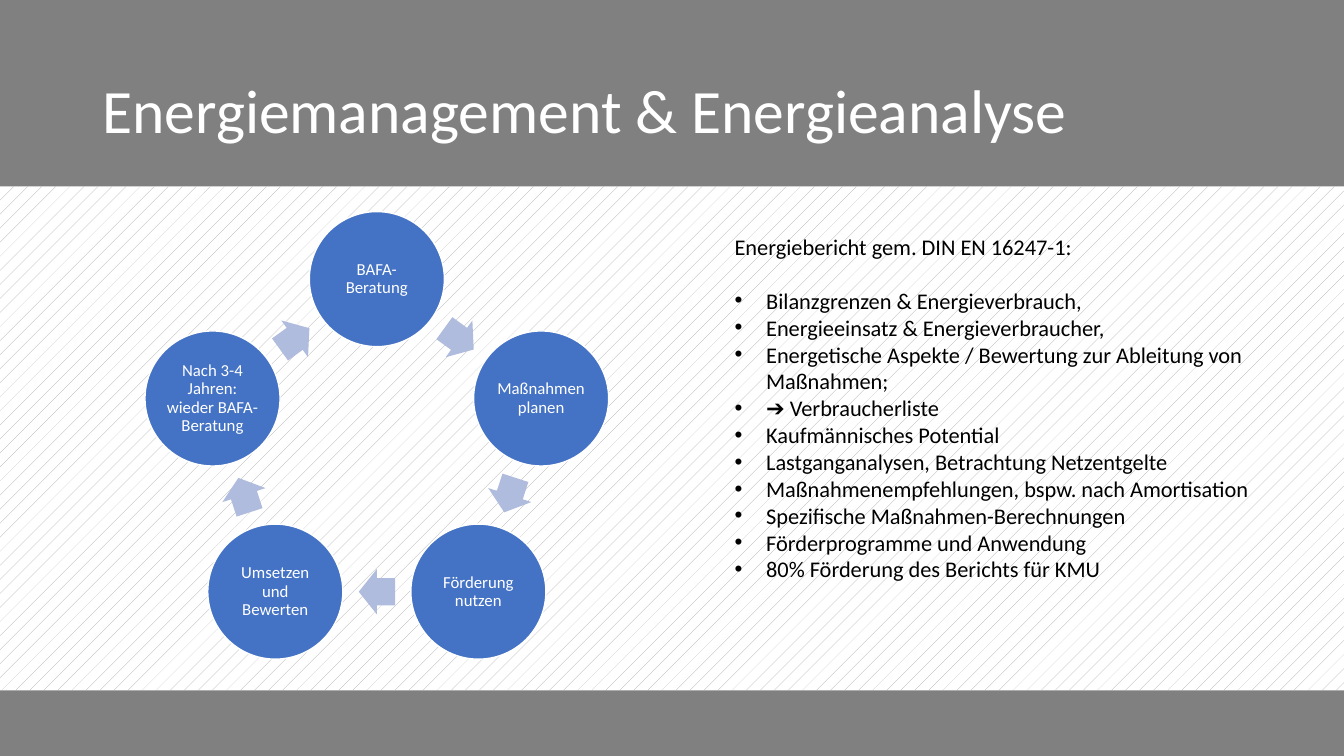
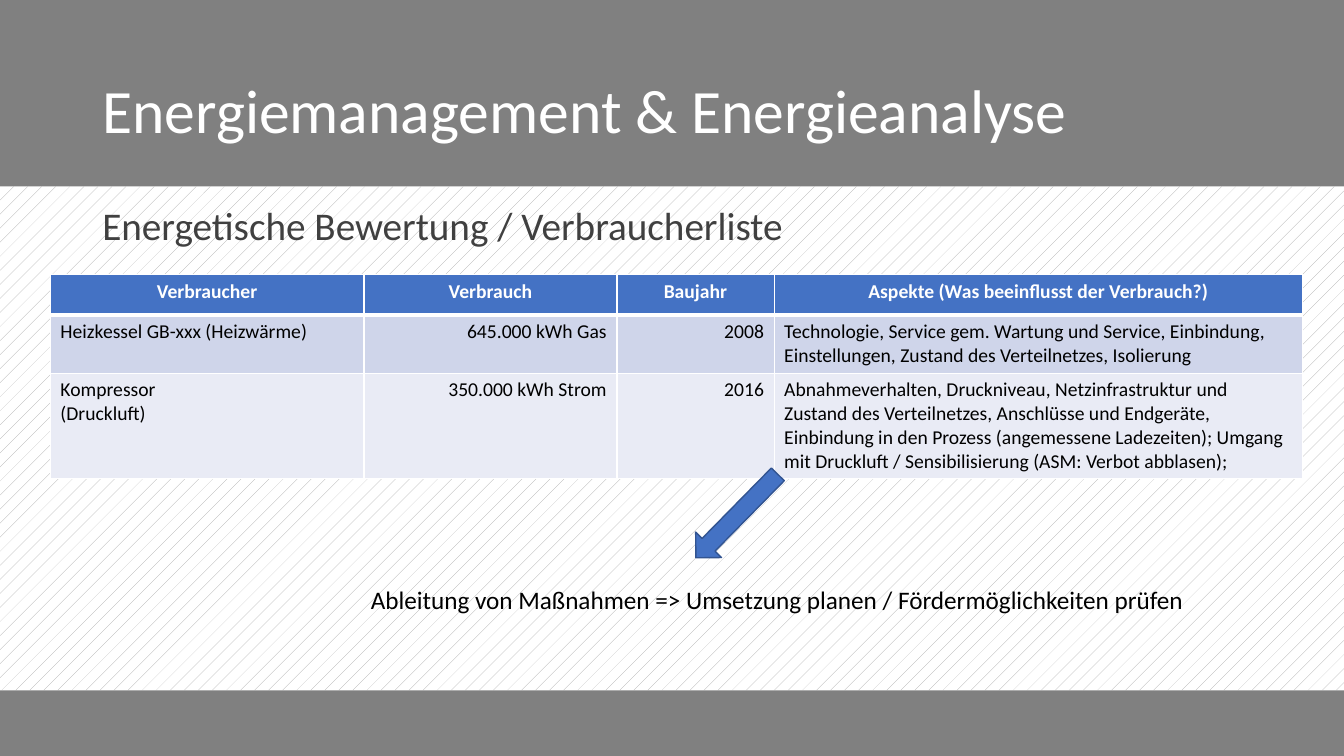
from math import cos, pi, sin

from lxml.etree import SubElement as Sub
from pptx import Presentation
from pptx.dml.color import RGBColor as Rgb
from pptx.enum.dml import MSO_PATTERN as Pat
from pptx.enum.shapes import MSO_SHAPE as Kind
from pptx.enum.text import MSO_ANCHOR as Anchor, MSO_AUTO_SIZE as Fit, PP_ALIGN as Align
from pptx.oxml.ns import qn
from pptx.util import Pt

FONT = "Calibri"
WIDE, HIGH = 960, 540
TITLE = "Energiemanagement & Energieanalyse"
HEX = {
    "grey": "808080", "hatch": "A6A6A6", "white": "FFFFFF", "black": "000000",
    "dark": "404040", "blue": "4472C4", "edge": "325491", "pale": "B0BCDE",
    "odd": "CFD5EA", "even": "E9EBF5",
}
STEPS = [
    "BAFA-Beratung", "Maßnahmen planen", "Förderung nutzen",
    "Umsetzen und Bewerten", "Nach 3-4 Jahren: wieder BAFA-Beratung",
]
REPORT = [
    "Energiebericht gem. DIN EN 16247-1:",
    "Bilanzgrenzen & Energieverbrauch,",
    "Energieeinsatz & Energieverbraucher,",
    "Energetische Aspekte / Bewertung zur Ableitung von Maßnahmen;",
    "➔ Verbraucherliste",
    "Kaufmännisches Potential",
    "Lastganganalysen, Betrachtung Netzentgelte",
    "Maßnahmenempfehlungen, bspw. nach Amortisation",
    "Spezifische Maßnahmen-Berechnungen",
    "Förderprogramme und Anwendung",
    "80% Förderung des Berichts für KMU",
]
COLS = [224, 180.7, 112.3, 377.5]
ROWS = [29.2, 41.4, 75]
USERS = [
    ["Verbraucher", "Verbrauch", "Baujahr", "Aspekte (Was beeinflusst der Verbrauch?)"],
    ["Heizkessel GB-xxx (Heizwärme)", "645.000 kWh Gas", "2008",
     "Technologie, Service gem. Wartung und Service, Einbindung, "
     "Einstellungen, Zustand des Verteilnetzes, Isolierung"],
    ["Kompressor\n(Druckluft)", "350.000 kWh Strom", "2016",
     "Abnahmeverhalten, Druckniveau, Netzinfrastruktur und Zustand des "
     "Verteilnetzes, Anschlüsse und Endgeräte, Einbindung in den Prozess "
     "(angemessene Ladezeiten); Umgang mit Druckluft / Sensibilisierung "
     "(ASM: Verbot abblasen);"],
]


def color(name):
    return Rgb.from_string(HEX[name])


def write(frame, text, size, ink, align=Align.LEFT, space=1, bold=False):
    frame.text = text
    for para in frame.paragraphs:
        para.alignment, para.line_spacing = align, space
        font = para.font
        font.name, font.size, font.bold = FONT, Pt(size), bold
        font.color.rgb = color(ink)


def add_box(slide, place, text, size, ink, wrap=True, space=1):
    frame = slide.shapes.add_textbox(*map(Pt, place)).text_frame
    frame.word_wrap = wrap
    write(frame, text, size, ink, space=space)
    return frame


def add_form(slide, kind, place, fill, edge=None, turn=0):
    form = slide.shapes.add_shape(kind, *map(Pt, place))
    form.shadow.inherit = False
    form.rotation = turn
    form.fill.solid()
    form.fill.fore_color.rgb = color(fill)
    if edge:
        form.line.color.rgb = color(edge)
        form.line.width = Pt(1)
    else:
        form.line.fill.background()
    return form


def set_look(deck, layout):
    """Give the master its grey ground and the layout its hatched band."""
    ground = deck.slide_master.background.fill
    ground.solid()
    ground.fore_color.rgb = color("grey")
    slide = deck.slides[0]
    band = add_form(slide, Kind.RECTANGLE, (0, 133.2, WIDE, 360), "white")
    band.fill.patterned()
    band.fill.pattern = Pat.PERCENT_5
    band.fill.fore_color.rgb = color("hatch")
    band.fill.back_color.rgb = color("white")
    layout.shapes.element.insert(2, band.element)


def add_slide(deck, layout):
    slide = deck.slides.add_slide(layout)
    title = slide.shapes.title
    title.left, title.top, title.width, title.height = map(Pt, (66, 28.8, 828, 104.4))
    frame = title.text_frame
    frame.auto_size, frame.vertical_anchor = Fit.NONE, Anchor.MIDDLE
    write(frame, TITLE, 44, "white", space=0.9)
    return slide


def add_cycle(slide, mid_x, mid_y, radius, size):
    """Set the steps clockwise on a ring, with an arrow between neighbours."""
    turn = 360 / len(STEPS)

    def spot(angle, dist, wide, high):
        rad = angle * pi / 180
        return (mid_x + dist * sin(rad) - wide / 2,
                mid_y - dist * cos(rad) - high / 2, wide, high)

    for i, step in enumerate(STEPS):
        node = add_form(slide, Kind.OVAL, spot(i * turn, radius, size, size), "blue", "white")
        frame = node.text_frame
        frame.word_wrap, frame.vertical_anchor = True, Anchor.MIDDLE
        frame.margin_left = frame.margin_right = Pt(1.5)
        frame.margin_top = frame.margin_bottom = Pt(1.5)
        write(frame, step, 12, "white", Align.CENTER, 0.9)
        angle = (i + 0.5) * turn
        place = spot(angle, radius * cos(pi / len(STEPS)), 25.9, 32.4)
        arrow = add_form(slide, Kind.RIGHT_ARROW, place, "pale", turn=angle)
        arrow.adjustments[0], arrow.adjustments[1] = 0.6, 0.5


def add_bullet(para):
    props = para._p.get_or_add_pPr()
    props.set("marL", str(Pt(22.5)))
    props.set("indent", str(-Pt(22.5)))
    Sub(props, qn("a:buFont"), typeface="Arial")
    Sub(props, qn("a:buChar"), char="•")


def add_list(slide, place, lines):
    """Write a lead line with bulleted lines below it."""
    frame = add_box(slide, place, "\n".join(lines), 16, "black")
    lead, *items = frame.paragraphs
    lead.space_after = Pt(19.5)
    for para in items:
        add_bullet(para)


def set_edges(cell, row):
    """Draw white cell borders, thick below the header row."""
    props = cell._tc.get_or_add_tcPr()
    thick = {(0, "B"), (1, "T")}
    for side in "LRTB":
        width = Pt(3 if (row, side) in thick else 1)
        line = Sub(props, qn("a:ln" + side), w=str(width))
        Sub(Sub(line, qn("a:solidFill")), qn("a:srgbClr"), val=HEX["white"])


def add_grid(slide, left, top):
    size = Pt(sum(COLS)), Pt(sum(ROWS))
    grid = slide.shapes.add_table(len(ROWS), len(COLS), Pt(left), Pt(top), *size).table
    for col, wide in zip(grid.columns, COLS):
        col.width = Pt(wide)
    fills = ["blue", "odd", "even"]
    sides = [Align.LEFT, Align.RIGHT, Align.RIGHT, Align.LEFT]
    for r, (high, texts) in enumerate(zip(ROWS, USERS)):
        grid.rows[r].height = Pt(high)
        head = r == 0
        for c, text in enumerate(texts):
            cell = grid.cell(r, c)
            set_edges(cell, r)
            cell.fill.solid()
            cell.fill.fore_color.rgb = color(fills[r])
            write(cell.text_frame, text, 14, "white" if head else "black",
                  Align.CENTER if head else sides[c], bold=head)


def main():
    deck = Presentation()
    deck.slide_width, deck.slide_height = Pt(WIDE), Pt(HIGH)
    layout = deck.slide_layouts[5]

    cycle = add_slide(deck, layout)
    set_look(deck, layout)
    add_cycle(cycle, 269.2, 322.8, 123.4, 96.5)
    add_list(cycle, (517.7, 162.7, 396, 298), REPORT)

    users = add_slide(deck, layout)
    add_box(users, (66, 144, 852.5, 52.5), "Energetische Bewertung / Verbraucherliste",
            28, "dark", space=0.9)
    add_grid(users, 36, 196)
    add_form(users, Kind.DOWN_ARROW, (513.4, 326.9, 25.9, 83.5), "blue", "edge", 44.5)
    add_box(users, (257.8, 414, 602, 29),
            "Ableitung von Maßnahmen => Umsetzung planen / Fördermöglichkeiten prüfen",
            18, "black", wrap=False)
    deck.save("out.pptx")


if __name__ == "__main__":
    main()
